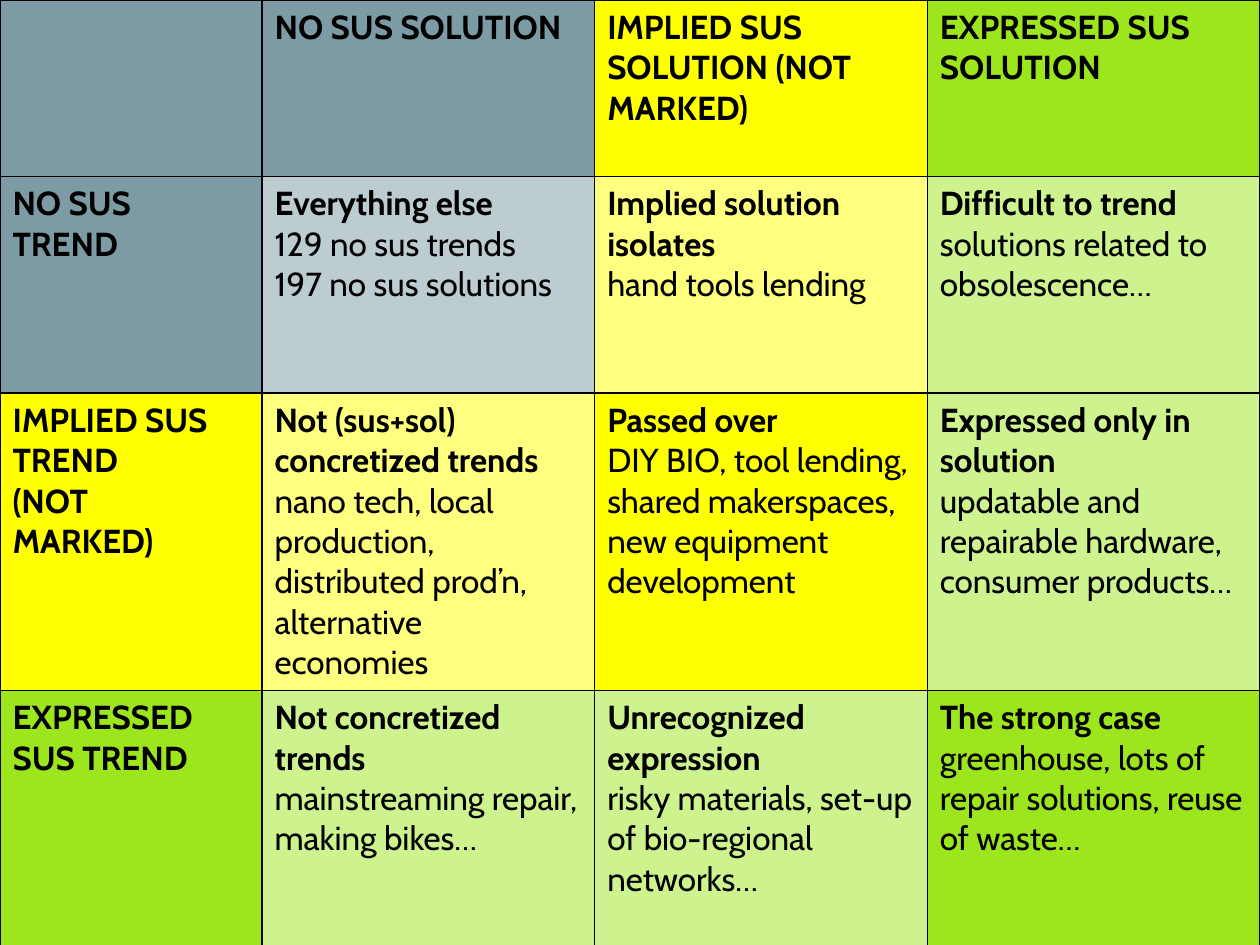
from lxml.etree import SubElement as Sub
from pptx import Presentation
from pptx.dml.color import RGBColor as RGB
from pptx.oxml.ns import qn
from pptx.util import Inches as In, Pt

# Each cell: bold paragraphs, then plain paragraphs
ROWS = [
    [
        ([], []),
        (["NO SUS SOLUTION"], []),
        (["IMPLIED SUS SOLUTION (NOT MARKED)"], []),
        (["EXPRESSED SUS SOLUTION"], []),
    ],
    [
        (["NO SUS", "TREND"], []),
        (["Everything else"], ["129 no sus trends", "197 no sus solutions"]),
        (["Implied solution isolates"], ["hand tools lending"]),
        (["Difficult to trend"], ["solutions related to obsolescence…"]),
    ],
    [
        (["IMPLIED SUS TREND", "(NOT", "MARKED)"], []),
        (["Not (sus+sol) concretized trends"],
         ["nano tech, local production, distributed prod’n, alternative economies"]),
        (["Passed over"],
         ["DIY BIO, tool lending, shared makerspaces, new equipment development"]),
        (["Expressed only in solution"],
         ["updatable and repairable hardware, consumer products…"]),
    ],
    [
        (["EXPRESSED", "SUS TREND"], []),
        (["Not concretized", "trends"], ["mainstreaming repair, making bikes…"]),
        (["Unrecognized expression"],
         ["risky materials, set-up of bio-regional networks…"]),
        (["The strong case"],
         ["greenhouse, lots of", "repair solutions, reuse", "of waste…"]),
    ],
]
WIDTHS = [2.08, 2.64, 2.64, 2.64]
HEIGHTS = [1.4, 1.72, 2.36, 2.04]
LEVELS = ["7C9BA5", "7C9BA5", "FFFF00", "9DE61E"]  # none, none, implied, expressed
INK = "000000"


def paint(fill, color, alpha=None):
    fill.solid()
    fill.fore_color.rgb = RGB.from_string(color)
    if alpha:
        node = fill._xPr.find(qn("a:solidFill"))[0]
        Sub(node, qn("a:alpha"), val=str(alpha * 1000))


def frame(cell):
    """Draw a thin line on all four sides; call before filling the cell."""
    props = cell._tc.get_or_add_tcPr()
    for side in "LRTB":
        line = Sub(props, qn(f"a:ln{side}"), w=str(Pt(1)))
        Sub(Sub(line, qn("a:solidFill")), qn("a:srgbClr"), val=INK)


def write(cell, bold, plain):
    cell.margin_left = cell.margin_right = In(0.1)
    cell.margin_top = cell.margin_bottom = In(0.06)
    cell.text = "\n".join(bold + plain)
    for i, para in enumerate(cell.text_frame.paragraphs):
        font = para.font
        font.name, font.size, font.bold = "Cabin", Pt(19), i < len(bold)
        font.color.rgb = RGB.from_string(INK)


def main():
    prs = Presentation()
    prs.slide_width, prs.slide_height = In(10), In(7.5)
    slide = prs.slides.add_slide(prs.slide_layouts[6])
    grid = slide.shapes.add_table(len(ROWS), len(WIDTHS), 0, 0,
                                  In(sum(WIDTHS)), In(sum(HEIGHTS))).table
    for col, width in zip(grid.columns, WIDTHS):
        col.width = In(width)
    for row, height in zip(grid.rows, HEIGHTS):
        row.height = In(height)

    for r, row in enumerate(ROWS):
        for c, (bold, plain) in enumerate(row):
            cell = grid.cell(r, c)
            write(cell, bold, plain)
            frame(cell)
            # The stronger level gives the hue; headers and matches are solid
            solid = r == 0 or c == 0 or r == c > 1
            paint(cell.fill, LEVELS[max(r, c)], None if solid else 50)

    prs.save("out.pptx")


if __name__ == "__main__":
    main()
